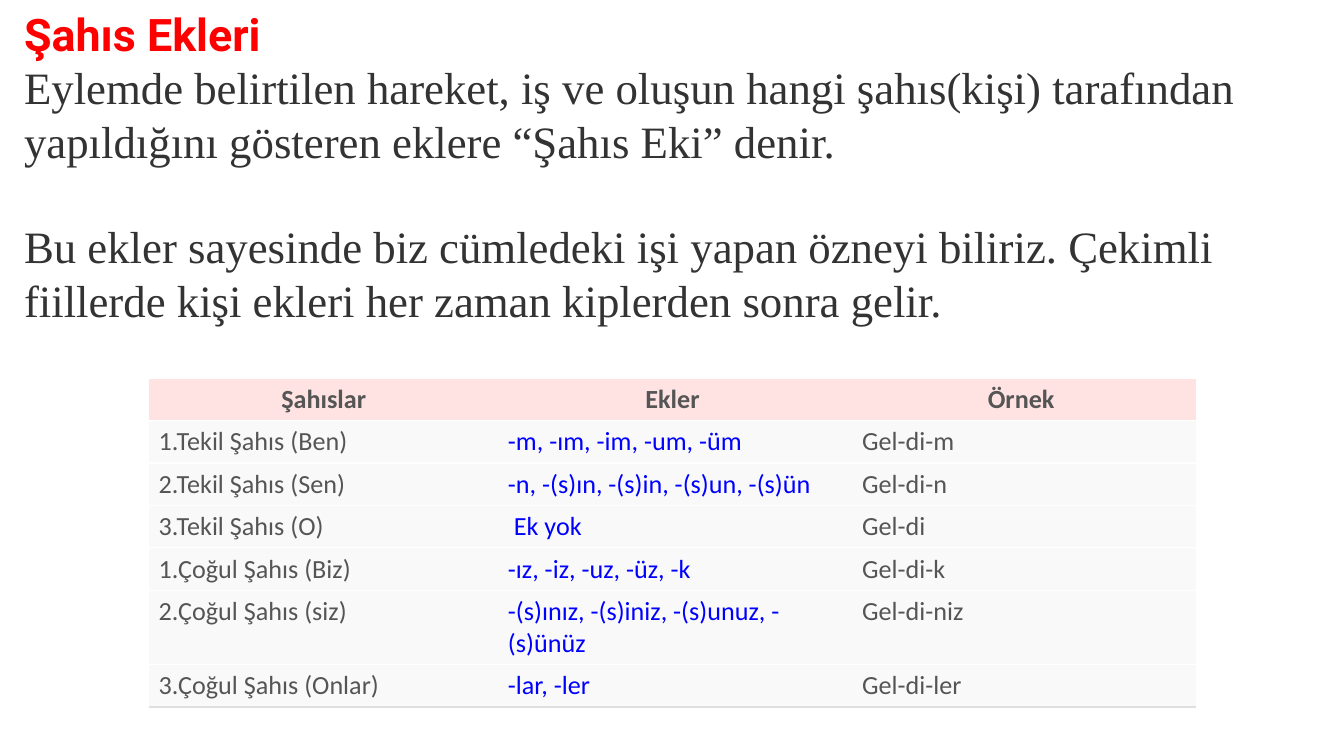
"""Build a slide on Turkish personal suffixes with a definition and a table."""
from lxml.etree import SubElement
from pptx import Presentation
from pptx.dml.color import RGBColor
from pptx.enum.text import MSO_ANCHOR as Anchor, MSO_AUTO_SIZE as AutoSize, PP_ALIGN as Align
from pptx.oxml.ns import qn
from pptx.util import Cm, Pt

RED = RGBColor(0xFF, 0x00, 0x00)
DARK = RGBColor(0x33, 0x33, 0x33)
GREY = RGBColor(0x55, 0x55, 0x55)
BLUE = RGBColor(0x00, 0x00, 0xFF)
WHITE = RGBColor(0xFF, 0xFF, 0xFF)
PINK = RGBColor(0xFF, 0xE3, 0xE3)
PALE = RGBColor(0xF9, 0xF9, 0xF9)
SILVER = RGBColor(0xDF, 0xDF, 0xDF)

DEFINITIONS = [
    "Eylemde belirtilen hareket, iş ve oluşun hangi şahıs(kişi) tarafından "
    "yapıldığını gösteren eklere “Şahıs Eki” denir.",
    "Bu ekler sayesinde biz cümledeki işi yapan özneyi biliriz. Çekimli "
    "fiillerde kişi ekleri her zaman kiplerden sonra gelir.",
]
ROWS = [
    ("Şahıslar", "Ekler", "Örnek"),
    ("1.Tekil Şahıs (Ben)", "-m, -ım, -im, -um, -üm", " Gel-di-m"),
    ("2.Tekil Şahıs (Sen)", "-n, -(s)ın, -(s)in, -(s)un, -(s)ün", " Gel-di-n"),
    ("3.Tekil Şahıs (O)", " Ek yok", " Gel-di"),
    ("1.Çoğul Şahıs (Biz)", "-ız, -iz, -uz, -üz, -k", " Gel-di-k"),
    ("2.Çoğul Şahıs (siz)", "-(s)ınız, -(s)iniz, -(s)unuz, -(s)ünüz", " Gel-di-niz"),
    ("3.Çoğul Şahıs (Onlar)", "-lar, -ler", " Gel-di-ler"),
]


def format_paragraph(paragraph, color, **values):
    for name, value in values.items():
        setattr(paragraph.font, name, value)
    paragraph.font.color.rgb = color


def add_border(cell, side, color=None):
    properties = cell._tc.get_or_add_tcPr()
    line = SubElement(properties, qn("a:ln" + side), w=str(Pt(0.75)))
    if color is None:
        SubElement(line, qn("a:noFill"))
    else:
        fill = SubElement(line, qn("a:solidFill"))
        SubElement(fill, qn("a:srgbClr"), val=str(color))


presentation = Presentation()
presentation.slide_width = Cm(25.4)
presentation.slide_height = Cm(14.28)
slide = presentation.slides.add_slide(presentation.slide_layouts[1])
title, body = slide.placeholders

for shape, top, height in ((title, 0, 1.25), (body, 1.0, 7.46)):
    frame = {"left": Cm(0.2), "top": Cm(top), "width": Cm(25.2), "height": Cm(height)}
    for name, value in frame.items():
        setattr(shape, name, value)
    shape.text_frame.auto_size = AutoSize.NONE
    shape.text_frame.vertical_anchor = Anchor.TOP

title.text_frame.text = "Şahıs Ekleri"
heading = title.text_frame.paragraphs[0]
heading.alignment = Align.LEFT
format_paragraph(heading, RED, name="Roboto", size=Pt(24), bold=True)

body.text_frame.text = "\n".join(DEFINITIONS)
for paragraph, gap in zip(body.text_frame.paragraphs, (0, 27.6)):
    format_paragraph(paragraph, DARK, name="Times New Roman", size=Pt(24), bold=False)
    paragraph.space_before = Pt(gap)
    properties = paragraph._p.get_or_add_pPr()
    properties.set("marL", "0")
    properties.set("indent", "0")
    SubElement(properties, qn("a:buNone"))
    properties.append(properties.find(qn("a:defRPr")))

table = slide.shapes.add_table(
    len(ROWS), 3, Cm(2.82), Cm(7.14), Cm(19.77), Cm(4.48)
).table
table.horz_banding = False
for column, width in zip(table.columns, (6.6, 6.58, 6.6)):
    column.width = Cm(width)

cell_format = {
    "margin_left": Cm(0.18), "margin_right": Cm(0.18),
    "margin_top": Cm(0.1), "margin_bottom": Cm(0.1),
}
for row_index, row in enumerate(ROWS):
    is_header = row_index == 0
    is_last = row_index == len(ROWS) - 1
    table.rows[row_index].height = Cm(0.64)
    for column_index, text in enumerate(row):
        cell = table.cell(row_index, column_index)
        for name, value in cell_format.items():
            setattr(cell, name, value)
        add_border(cell, "L")
        add_border(cell, "R")
        add_border(cell, "T", WHITE)
        add_border(cell, "B", SILVER if is_last else WHITE)
        cell.fill.solid()
        cell.fill.fore_color.rgb = PINK if is_header else PALE
        cell.text = text
        paragraph = cell.text_frame.paragraphs[0]
        paragraph.alignment = Align.CENTER if is_header else Align.LEFT
        color = BLUE if column_index == 1 and not is_header else GREY
        format_paragraph(paragraph, color, name="Calibri", size=Pt(14), bold=is_header)

presentation.save("out.pptx")
